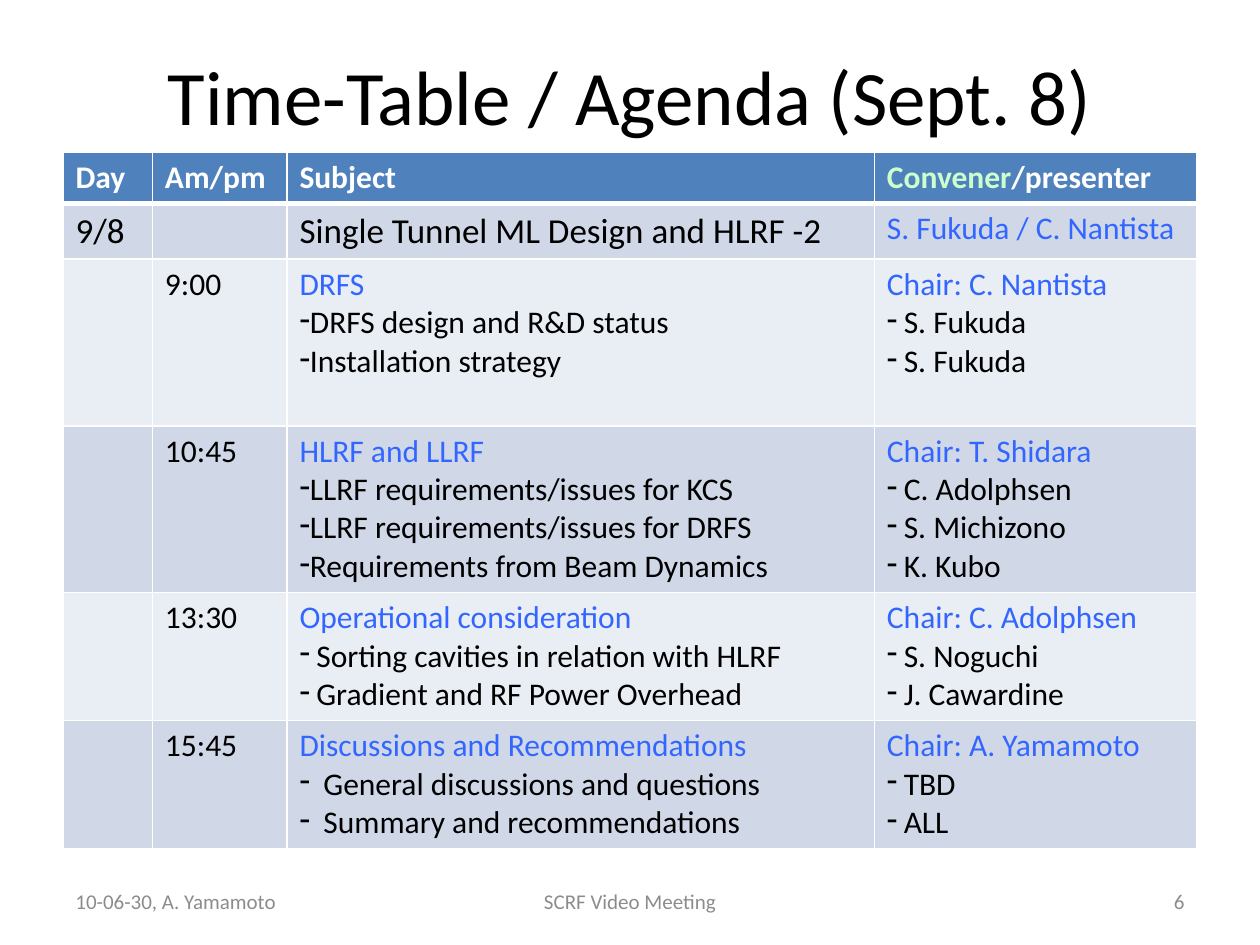
"""Build the Sept. 8 time-table slide."""
import pptx
import pptx.dml.color
import pptx.enum.text
import pptx.oxml
import pptx.oxml.ns
import pptx.util

Pt = pptx.util.Pt
ALIGN = pptx.enum.text.PP_ALIGN
MIDDLE = pptx.enum.text.MSO_ANCHOR.MIDDLE

FONT = "Calibri"
BLACK, WHITE, GREY = "000000", "FFFFFF", "8C8C8C"
BLUE, MINT = "3366FF", "CCFFCC"
HEADER_FILL, BAND_FILLS = "4F81BD", ("D0D8E8", "E9EDF4")

TITLE = "Time-Table / Agenda (Sept. 8)"
HEADINGS = [
    [("Day", WHITE)],
    [("Am/pm", WHITE)],
    [("Subject", WHITE)],
    [("Convener", MINT), ("/presenter", WHITE)],
]
DAY = ("9/8", "Single Tunnel ML Design and HLRF -2", "S. Fukuda / C. Nantista")
TIGHT, SPACED, WIDE = 0, 9.6, 13.65
SESSIONS = [
    ("9:00", "DRFS", TIGHT,
     ["DRFS design and R&D status", "Installation strategy"],
     "Chair: C. Nantista", ["S. Fukuda", "S. Fukuda"]),
    ("10:45", "HLRF and LLRF", TIGHT,
     ["LLRF requirements/issues for KCS", "LLRF requirements/issues for DRFS",
      "Requirements from Beam Dynamics"],
     "Chair: T. Shidara", ["C. Adolphsen", "S. Michizono", "K. Kubo"]),
    ("13:30", "Operational consideration", SPACED,
     ["Sorting cavities in relation with HLRF", "Gradient and RF Power Overhead"],
     "Chair: C. Adolphsen", ["S. Noguchi", "J. Cawardine"]),
    ("15:45", "Discussions and Recommendations", WIDE,
     ["General discussions and questions", "Summary and recommendations"],
     "Chair: A. Yamamoto", ["TBD", "ALL"]),
]
FOOTERS = [
    ("10-06-30, A. Yamamoto", 36, 168, ALIGN.LEFT),
    ("SCRF Video Meeting", 246, 228, ALIGN.CENTER),
    ("6", 516, 168, ALIGN.RIGHT),
]
COLUMN_WIDTHS = [51.1, 76.9, 335.7, 184.3]
ROW_HEIGHTS = [29.2, 31.6, 95.2, 95.2, 73.2, 73.2]


def rgb(value):
    return pptx.dml.color.RGBColor.from_string(value)


def add_span(para, text, color, size=18, bold=False):
    span = para.add_run()
    span.text = text
    span.font.name = FONT
    span.font.size = Pt(size)
    span.font.bold = bold
    span.font.color.rgb = rgb(color)


def add_dash(para, hang):
    properties = para._p.get_or_add_pPr()
    properties.set("marL", str(Pt(hang)))
    properties.set("indent", str(-Pt(hang)))
    bullet = properties.makeelement(pptx.oxml.ns.qn("a:buChar"), {"char": "-"})
    properties.append(bullet)


def write_session(cell, lead, items, hang):
    frame = cell.text_frame
    add_span(frame.paragraphs[0], lead, BLUE)
    for item in items:
        para = frame.add_paragraph()
        add_dash(para, hang)
        add_span(para, item, BLACK)


def style_cell(cell, fill, bottom_width):
    properties = cell._tc.get_or_add_tcPr()
    for side in "LRTB":
        width = Pt(bottom_width if side == "B" else 1)
        properties.append(pptx.oxml.parse_xml(
            f'<a:ln{side} {pptx.oxml.ns.nsdecls("a")} w="{width}"><a:solidFill>'
            f'<a:srgbClr val="{WHITE}"/></a:solidFill></a:ln{side}>'))
    cell.fill.solid()
    cell.fill.fore_color.rgb = rgb(fill)


def add_agenda(page):
    frame = page.shapes.add_table(
        len(ROW_HEIGHTS), len(COLUMN_WIDTHS), Pt(36), Pt(87.2),
        Pt(sum(COLUMN_WIDTHS)), Pt(sum(ROW_HEIGHTS)))
    table = frame.table
    for column, width in zip(table.columns, COLUMN_WIDTHS):
        column.width = Pt(width)
    for index, (row, height) in enumerate(zip(table.rows, ROW_HEIGHTS)):
        row.height = Pt(height)
        fill = BAND_FILLS[(index - 1) % 2] if index else HEADER_FILL
        for cell in row.cells:
            style_cell(cell, fill, 1 if index else 3)

    for column, spans in enumerate(HEADINGS):
        for text, color in spans:
            add_span(table.cell(0, column).text_frame.paragraphs[0], text, color, bold=True)
    for column, text, color, size in zip((0, 2, 3), DAY, (BLACK, BLACK, BLUE), (20, 20, 18)):
        add_span(table.cell(1, column).text_frame.paragraphs[0], text, color, size)
    for row, (time, subject, hang, topics, chair, speakers) in enumerate(SESSIONS, start=2):
        add_span(table.cell(row, 1).text_frame.paragraphs[0], time, BLACK)
        write_session(table.cell(row, 2), subject, topics, hang)
        write_session(table.cell(row, 3), chair, speakers, SPACED)


def add_title(page):
    box = page.shapes.title
    box.left, box.top, box.width, box.height = Pt(36), Pt(21.6), Pt(648), Pt(65.5)
    box.text_frame.vertical_anchor = MIDDLE
    para = box.text_frame.paragraphs[0]
    para.alignment = ALIGN.CENTER
    add_span(para, TITLE, BLACK, 44)


def add_footer(page, text, left, width, alignment):
    box = page.shapes.add_textbox(Pt(left), Pt(500.5), Pt(width), Pt(28.8))
    box.text_frame.word_wrap = True
    box.text_frame.vertical_anchor = MIDDLE
    para = box.text_frame.paragraphs[0]
    para.alignment = alignment
    add_span(para, text, GREY, 12)


def main():
    deck = pptx.Presentation()
    deck.slide_width, deck.slide_height = Pt(720), Pt(540)
    page = deck.slides.add_slide(deck.slide_layouts[5])
    add_title(page)
    add_agenda(page)
    for footer in FOOTERS:
        add_footer(page, *footer)
    deck.save("out.pptx")


if __name__ == "__main__":
    main()
